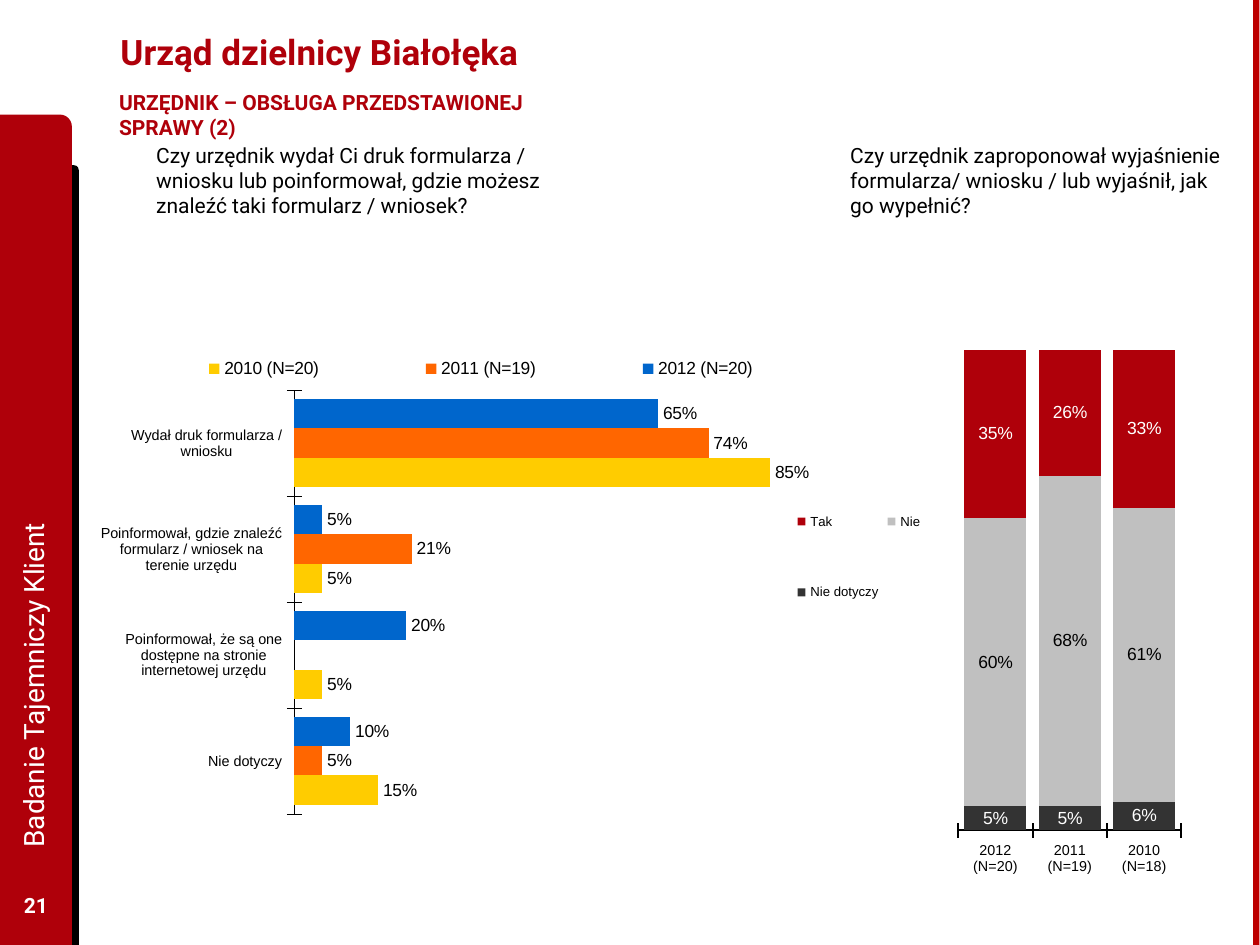
from dataclasses import dataclass
from typing import Optional

from pptx import Presentation
from pptx.chart.chart import Chart
from pptx.chart.data import CategoryChartData
from pptx.dml.color import RGBColor
from pptx.enum.chart import XL_CHART_TYPE, XL_LABEL_POSITION, XL_LEGEND_POSITION, XL_TICK_MARK
from pptx.enum.shapes import MSO_SHAPE
from pptx.enum.text import MSO_ANCHOR, PP_ALIGN
from pptx.oxml import parse_xml
from pptx.oxml.ns import nsdecls
from pptx.slide import Slide
from pptx.util import Cm, Pt

BLACK = RGBColor(0x00, 0x00, 0x00)
WHITE = RGBColor(0xFF, 0xFF, 0xFF)
CRIMSON = RGBColor(0xAF, 0x00, 0x0A)
EDGE_RED = RGBColor(0xBD, 0x00, 0x00)
CHARCOAL = RGBColor(0x33, 0x33, 0x33)
SILVER = RGBColor(0xC0, 0xC0, 0xC0)
BLUE = RGBColor(0x00, 0x66, 0xCC)
ORANGE = RGBColor(0xFF, 0x66, 0x00)
YELLOW = RGBColor(0xFF, 0xCC, 0x00)

Box = tuple[float, float, float, float]


@dataclass
class Answer:
    """One chart series with its colours."""
    name: str
    shares: list[Optional[float]]
    fill: RGBColor
    label_color: RGBColor = BLACK


@dataclass
class Survey:
    """One survey question drawn as a bar or column chart."""
    kind: XL_CHART_TYPE
    box: Box
    categories: list[str]
    answers: list[Answer]
    label_position: XL_LABEL_POSITION
    legend_position: XL_LEGEND_POSITION
    plot_layout: Box
    legend_layout: Box
    axis_size: float
    legend_size: float
    axis_width: float
    gap: int
    overlap: int = 0
    reverse: bool = False


HANDOUT = Survey(
    XL_CHART_TYPE.BAR_CLUSTERED, (2.03, 6.81, 15.19, 9.6),
    ["Wydał druk formularza / wniosku",
     "Poinformował, gdzie znaleźć formularz / wniosek na terenie urzędu",
     "Poinformował, że są one dostępne na stronie internetowej urzędu",
     "Nie dotyczy"],
    [Answer("2012 (N=20)", [0.65, 0.05, 0.2, 0.1], BLUE),
     Answer("2011 (N=19)", [0.74, 0.21, None, 0.05], ORANGE),
     Answer("2010 (N=20)", [0.85, 0.05, 0.05, 0.15], YELLOW)],
    XL_LABEL_POSITION.OUTSIDE_END, XL_LEGEND_POSITION.RIGHT,
    (0.26, 0.11, 0.75, 0.89), (0, 0.03, 1, 0.07),
    axis_size=8.3, legend_size=10, axis_width=0.25, gap=60, reverse=True)

EXPLANATION = Survey(
    XL_CHART_TYPE.COLUMN_STACKED_100, (15.72, 6.32, 8.18, 12.12),
    ["2012 (N=20)", "2011 (N=19)", "2010 (N=18)"],
    [Answer("Nie dotyczy", [0.05, 0.05, 0.06], CHARCOAL, WHITE),
     Answer("Nie", [0.6, 0.68, 0.61], SILVER),
     Answer("Tak", [0.35, 0.26, 0.33], CRIMSON, WHITE)],
    XL_LABEL_POSITION.CENTER, XL_LEGEND_POSITION.LEFT,
    (0.44, 0.06, 0.55, 0.8), (0.03, 0.24, 0.33, 0.33),
    axis_size=8.2, legend_size=7.5, axis_width=1.17, gap=20, overlap=100)


def add_panel(slide: Slide, box: Box, color: RGBColor, preset: MSO_SHAPE) -> None:
    """Draw one plain filled panel."""
    panel = slide.shapes.add_shape(preset, *map(Cm, box))
    panel.shadow.inherit = False
    panel.fill.solid()
    panel.fill.fore_color.rgb = color
    panel.line.fill.background()


def add_text(slide: Slide, text: str, box: Box, *, size: float = 12, color: RGBColor = BLACK,
             bold: bool = False, align: PP_ALIGN = PP_ALIGN.LEFT,
             anchor: MSO_ANCHOR = MSO_ANCHOR.TOP, wrap: bool = True,
             side_inset: float = 0.25, rotation: float = 0) -> None:
    """Write one text box in the given format."""
    holder = slide.shapes.add_textbox(*map(Cm, box))
    holder.rotation = rotation
    frame = holder.text_frame
    frame.word_wrap = wrap
    frame.vertical_anchor = anchor
    frame.margin_left = frame.margin_right = Cm(side_inset)
    paragraph = frame.paragraphs[0]
    paragraph.alignment = align
    run = paragraph.add_run()
    run.text = text
    style_font(run.font, size, color, "Roboto")
    run.font.bold = bold


def style_font(font, size: float, color: RGBColor = BLACK, name: str = "Arial") -> None:
    """Set the face, size and colour of a font."""
    font.name = name
    font.size = Pt(size)
    font.color.rgb = color


def place_part(chart: Chart, part: str, layout: Box, index: int, target: str = "") -> None:
    """Give the plot area or legend a fixed place within the chart."""
    owner = chart.element.xpath(f".//c:{part}")[0]
    for automatic in owner.xpath("./c:layout"):
        owner.remove(automatic)
    x, y, w, h = layout
    owner.insert(index, parse_xml(
        f'<c:layout {nsdecls("c")}><c:manualLayout>{target}'
        '<c:xMode val="edge"/><c:yMode val="edge"/>'
        f'<c:x val="{x}"/><c:y val="{y}"/><c:w val="{w}"/><c:h val="{h}"/>'
        '</c:manualLayout></c:layout>'))


def add_survey(slide: Slide, survey: Survey) -> None:
    """Draw the chart of one survey question."""
    data = CategoryChartData(number_format="0%")
    data.categories = survey.categories
    for answer in survey.answers:
        data.add_series(answer.name, answer.shares)
    chart = slide.shapes.add_chart(survey.kind, *map(Cm, survey.box), data).chart
    chart.has_title = False
    style_font(chart.font, survey.axis_size)

    chart.has_legend = True
    chart.legend.position = survey.legend_position
    chart.legend.include_in_layout = False
    style_font(chart.legend.font, survey.legend_size)

    category_axis = chart.category_axis
    category_axis.major_tick_mark = XL_TICK_MARK.CROSS
    category_axis.reverse_order = survey.reverse
    category_axis.has_major_gridlines = False
    category_axis.format.line.color.rgb = BLACK
    category_axis.format.line.width = Pt(survey.axis_width)
    style_font(category_axis.tick_labels.font, survey.axis_size)
    value_axis = chart.value_axis
    value_axis.visible = False
    value_axis.has_major_gridlines = False
    value_axis.minimum_scale, value_axis.maximum_scale = 0, 1
    value_axis.major_unit = 0.2

    plot = chart.plots[0]
    plot.vary_by_categories = False
    plot.gap_width = survey.gap
    plot.overlap = survey.overlap
    for series, answer in zip(plot.series, survey.answers):
        series.format.fill.solid()
        series.format.fill.fore_color.rgb = answer.fill
        series.invert_if_negative = False
        labels = series.data_labels
        labels.show_value = True
        labels.number_format = "0%"
        labels.number_format_is_linked = False
        labels.position = survey.label_position
        style_font(labels.font, 10, answer.label_color)

    place_part(chart, "plotArea", survey.plot_layout, 0, '<c:layoutTarget val="inner"/>')
    place_part(chart, "legend", survey.legend_layout, 1)


def main() -> None:
    """Build the slide and save it."""
    deck = Presentation()
    deck.slide_width, deck.slide_height = Cm(25.4), Cm(19.05)
    slide = deck.slides.add_slide(deck.slide_layouts[6])

    add_panel(slide, (0.99, 3.33, 0.6, 15.72), BLACK, MSO_SHAPE.ROUND_1_RECTANGLE)
    add_panel(slide, (0, 2.31, 1.45, 16.74), CRIMSON, MSO_SHAPE.ROUND_1_RECTANGLE)
    add_panel(slide, (25.26, 0, 0.13, 19.05), EDGE_RED, MSO_SHAPE.RECTANGLE)

    add_text(slide, "Urząd dzielnicy Białołęka", (2.18, 0.13, 19.74, 1.83),
             size=20, color=CRIMSON, bold=True, anchor=MSO_ANCHOR.MIDDLE)
    add_text(slide, "URZĘDNIK – OBSŁUGA PRZEDSTAWIONEJ SPRAWY (2)", (1.9, 1.68, 9.78, 0.84),
             color=CRIMSON, bold=True, wrap=False, side_inset=0.5)
    add_text(slide, "Czy urzędnik zaproponował wyjaśnienie formularza/ wniosku / lub wyjaśnił, "
             "jak go wypełnić?", (16.89, 2.74, 8, 1.8))
    add_text(slide, "Czy urzędnik wydał Ci druk formularza / wniosku lub poinformował, "
             "gdzie możesz znaleźć taki formularz / wniosek?", (2.9, 2.74, 9.37, 1.8))
    add_survey(slide, EXPLANATION)
    add_survey(slide, HANDOUT)
    add_text(slide, "21", (0, 17.73, 1.45, 1.02), color=WHITE, bold=True,
             align=PP_ALIGN.CENTER, anchor=MSO_ANCHOR.MIDDLE)
    add_text(slide, "Badanie Tajemniczy Klient", (-6.65, 9.37, 14.63, 1.3),
             size=16, color=WHITE, anchor=MSO_ANCHOR.MIDDLE, rotation=270)
    deck.save("out.pptx")


if __name__ == "__main__":
    main()
